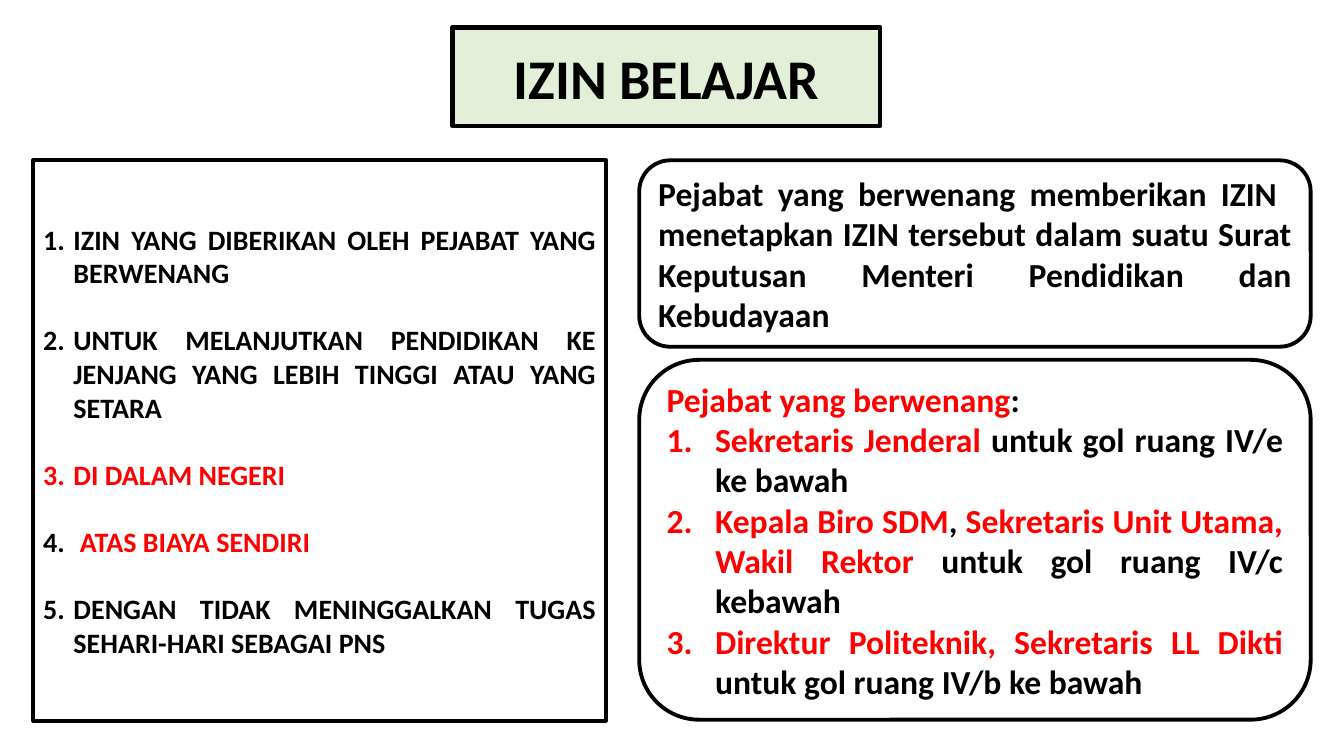
from lxml import etree
from pptx import Presentation
from pptx import util as u
from pptx.dml import color
from pptx.enum import shapes, text
from pptx.oxml import ns

COLORS = {"black": "000000", "red": "FF0000", "green": "E2F0D9"}


def rgb(name):
    return color.RGBColor.from_string(COLORS[name])


def format_box(shape, paragraphs, size, align=text.PP_ALIGN.JUSTIFY, fill=None,
               line=2.75, indent=0, first_item=0, gap=0):
    """Style a box and fill it; paragraphs from first_item on are numbered."""
    if fill:
        shape.fill.solid()
        shape.fill.fore_color.rgb = rgb(fill)
    else:
        shape.fill.background()
    shape.line.color.rgb = rgb("black")
    shape.line.width = u.Pt(line)
    frame = shape.text_frame
    frame.word_wrap = True
    frame.auto_size = text.MSO_AUTO_SIZE.NONE
    frame.vertical_anchor = text.MSO_ANCHOR.MIDDLE
    for index, runs in enumerate(paragraphs):
        paragraph = frame.add_paragraph() if index else frame.paragraphs[0]
        paragraph.alignment = align
        paragraph.line_spacing = 1.0
        paragraph.space_before = u.Pt(gap if index else 0)
        if indent and index >= first_item:
            properties = paragraph._p.get_or_add_pPr()
            properties.set("marL", str(u.Inches(indent)))
            properties.set("indent", str(-u.Inches(indent)))
            number = etree.SubElement(properties, ns.qn("a:buAutoNum"))
            number.set("type", "arabicPeriod")
        for words, ink in runs:
            run = paragraph.add_run()
            run.text = words
            run.font.name = "Calibri"
            run.font.size = u.Pt(size)
            run.font.bold = True
            run.font.color.rgb = rgb(ink)


presentation = Presentation()
presentation.slide_width = u.Inches(13.33)
presentation.slide_height = u.Inches(7.5)
slide = presentation.slides.add_slide(presentation.slide_layouts[5])

# Title in a rounded green box
title = slide.shapes.title
title.left, title.top = u.Inches(4.49), u.Inches(0.27)
title.width, title.height = u.Inches(4.24), u.Inches(0.98)
outline = etree.Element(ns.qn("a:prstGeom"), prst="roundRect")
etree.SubElement(outline, ns.qn("a:avLst"))
title._element.spPr.find(ns.qn("a:xfrm")).addnext(outline)
format_box(title, [[("IZIN BELAJAR", "black")]], 40,
           align=text.PP_ALIGN.CENTER, fill="green", line=3.25)

# Contents of the three boxes
conditions = [
    [("IZIN YANG DIBERIKAN OLEH PEJABAT YANG BERWENANG", "black")],
    [("UNTUK MELANJUTKAN PENDIDIKAN KE JENJANG YANG LEBIH TINGGI ATAU YANG SETARA", "black")],
    [("DI DALAM NEGERI", "red")],
    [(" ", "black"), ("ATAS BIAYA SENDIRI", "red")],
    [("DENGAN TIDAK MENINGGALKAN TUGAS SEHARI-HARI SEBAGAI PNS", "black")],
]
decree = [
    [("Pejabat yang berwenang memberikan IZIN  menetapkan IZIN tersebut dalam suatu "
      "Surat Keputusan Menteri Pendidikan dan Kebudayaan", "black")],
]
officials = [
    [("Pejabat yang berwenang", "red"), (":", "black")],
    [("Sekretaris Jenderal ", "red"), ("untuk gol ruang IV/e ke bawah", "black")],
    [("Kepala Biro SDM", "red"), (", ", "black"),
     ("Sekretaris Unit Utama, Wakil Rektor ", "red"),
     ("untuk gol ruang IV/c kebawah", "black")],
    [("Direktur Politeknik, Sekretaris LL Dikti ", "red"),
     ("untuk gol ruang IV/b ke bawah", "black")],
]

# Boxes: conditions on the left, decree and officials on the right
square = shapes.MSO_SHAPE.RECTANGLE
rounded = shapes.MSO_SHAPE.ROUNDED_RECTANGLE
boxes = [
    (square, (0.33, 1.59, 5.68, 5.56), conditions, dict(size=20, indent=0.3, gap=24)),
    (rounded, (6.34, 1.59, 6.66, 1.85), decree, dict(size=24)),
    (rounded, (6.34, 3.57, 6.66, 3.57), officials, dict(size=24, indent=0.48, first_item=1)),
]
for kind, place, paragraphs, options in boxes:
    shape = slide.shapes.add_shape(kind, *map(u.Inches, place))
    shape.shadow.inherit = False
    format_box(shape, paragraphs, **options)

presentation.save("out.pptx")
